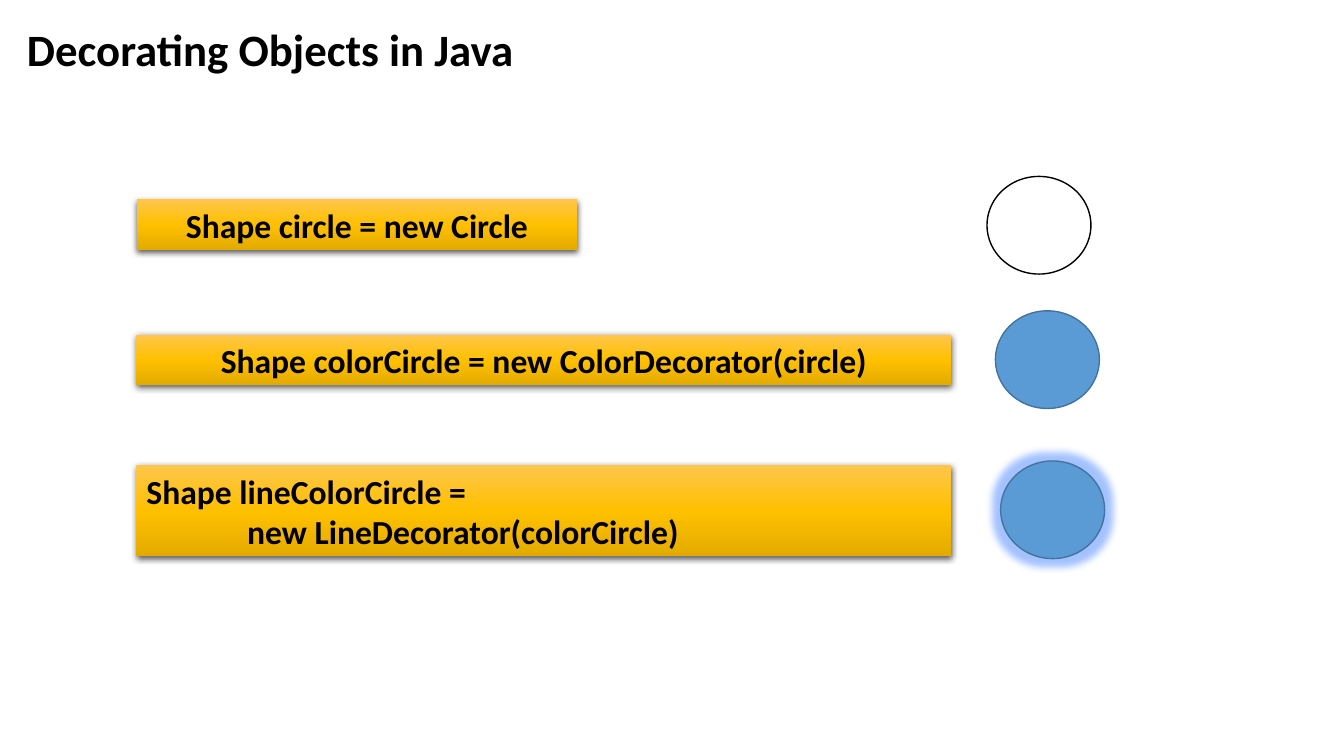
"""Build the slide on decorating objects in Java."""
from copy import deepcopy
from pptx import Presentation
from pptx.dml.color import RGBColor
from pptx.enum.shapes import MSO_SHAPE
from pptx.enum.text import MSO_ANCHOR, PP_ALIGN
from pptx.oxml import parse_xml
from pptx.oxml.ns import nsdecls, qn
from pptx.util import Pt

PX = 9525
HUES = {"black": "000000", "white": "FFFFFF", "blue": "5B9BD5", "edge": "43739E",
        "light": "FFC64B", "gold": "FFC000", "dark": "E3AB00", "glow": "1966FF"}
SHADOW = ('<a:outerShdw {} blurRad="57150" dist="19050" dir="5400000" algn="ctr" rotWithShape="0">'
          '<a:srgbClr val="{}"><a:alpha val="63000"/></a:srgbClr></a:outerShdw>')
GLOW = ('<a:glow {} rad="139700"><a:srgbClr val="{}">'
        '<a:alpha val="40000"/></a:srgbClr></a:glow>')


def color(name):
    return RGBColor.from_string(HUES[name])


def style(para, size, align):
    para.alignment = align
    para.font.name = "Calibri"
    para.font.size = Pt(size)
    para.font.bold = True
    para.font.color.rgb = color("black")


deck = Presentation()
deck.slide_width, deck.slide_height = 1280 * PX, 720 * PX
slide = deck.slides.add_slide(deck.slide_layouts[5])

title = slide.shapes.title
title.left, title.top, title.width, title.height = 16 * PX, 16 * PX, 1251 * PX, 68 * PX
title.text_frame.text = "Decorating Objects in Java"
title.text_frame.vertical_anchor = MSO_ANCHOR.MIDDLE
head = title.text_frame.paragraphs[0]
head.line_spacing = 0.9
style(head, 32, PP_ALIGN.LEFT)

codes = [
    (190, 420, 48, PP_ALIGN.CENTER, "Shape circle = new Circle"),
    (319, 776, 48, PP_ALIGN.CENTER, "Shape colorCircle = new ColorDecorator(circle)"),
    (443, 776, 87, PP_ALIGN.LEFT, "Shape lineColorCircle = \v\t\tnew LineDecorator(colorCircle)"),
]
for top, width, height, align, code in codes:
    box = slide.shapes.add_shape(MSO_SHAPE.RECTANGLE, 130 * PX, top * PX, width * PX, height * PX)
    box.fill.gradient()
    box.fill.gradient_angle = 270
    props = box.element.spPr
    stops = props.find(".//" + qn("a:gsLst"))
    stops.append(deepcopy(stops[-1]))
    for stop, place, name in zip(box.fill.gradient_stops, (0, 0.5, 1), ("light", "gold", "dark")):
        stop.position = place
        stop.color.rgb = color(name)
    box.line.fill.background()
    box.shadow.inherit = False
    props.find(qn("a:effectLst")).append(parse_xml(SHADOW.format(nsdecls("a"), HUES["black"])))
    box.text_frame.word_wrap = True
    box.text_frame.text = code
    style(box.text_frame.paragraphs[0], 24, align)

rounds = [(940, 168, "white", "black"), (948, 296, "blue", "edge"), (953, 439, "blue", "edge")]
for left, top, fill, edge in rounds:
    disc = slide.shapes.add_shape(MSO_SHAPE.OVAL, left * PX, top * PX, 99 * PX, 93 * PX)
    disc.fill.solid()
    disc.fill.fore_color.rgb = color(fill)
    disc.line.color.rgb = color(edge)
    disc.line.width = Pt(1)
    disc.shadow.inherit = False
glow = parse_xml(GLOW.format(nsdecls("a"), HUES["glow"]))
disc.element.spPr.find(qn("a:effectLst")).append(glow)

deck.save("out.pptx")
